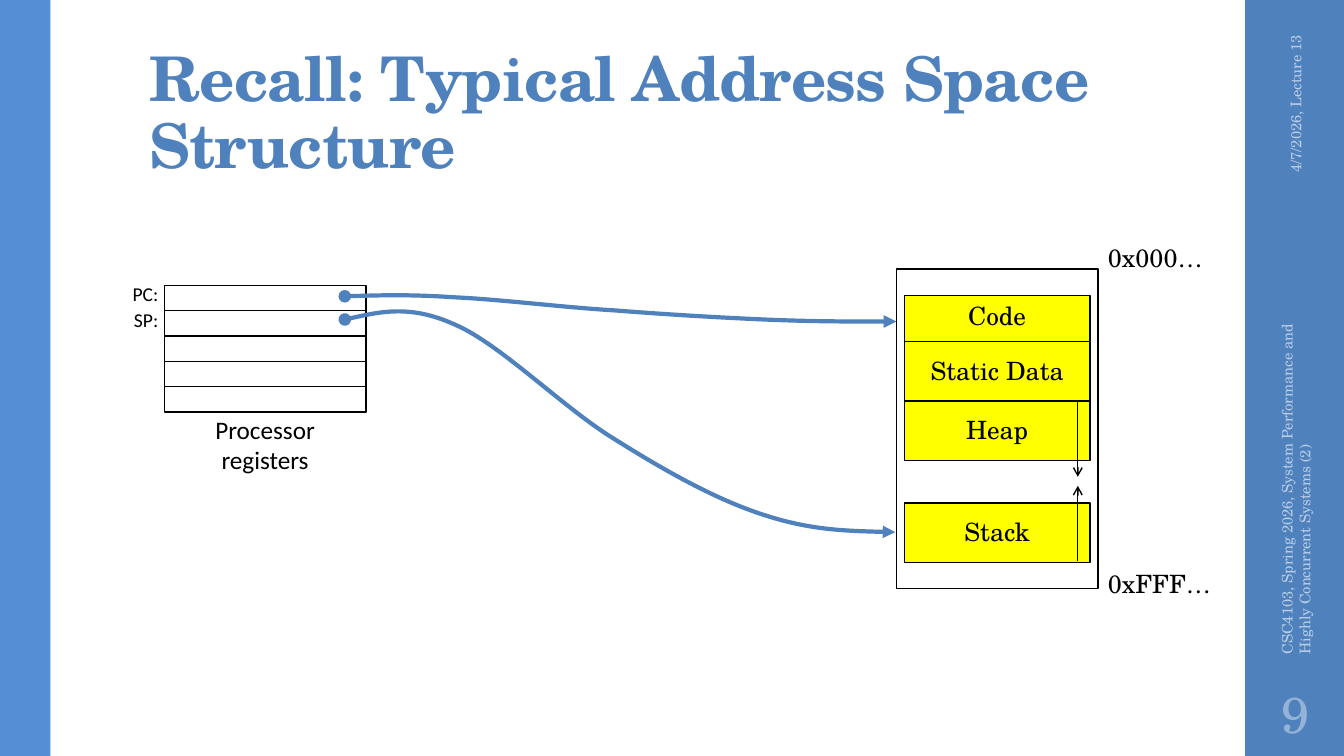
from lxml.etree import SubElement
from pptx import Presentation
from pptx.dml.color import RGBColor
from pptx.enum.shapes import MSO_CONNECTOR as LINK, MSO_SHAPE as SHAPE
from pptx.enum.text import MSO_ANCHOR as ANCHOR, PP_ALIGN as ALIGN
from pptx.oxml.ns import qn
from pptx.util import Pt

PX = 9144  # 100 px to the inch
SERIF, SANS = "TeX Gyre Schola", "Calibri"
BLUE, BLACK, YELLOW = "4F81BD", "000000", "FFFF00"


def px(*nums):
    return [round(n * PX) for n in nums]


def paint(fmt, color):
    fmt.solid()
    color_obj = fmt.fore_color
    color_obj.rgb = RGBColor.from_string(color)


def write(shape, text, size=18, font=SERIF, color=BLACK, bold=False,
          align=ALIGN.LEFT, anchor=ANCHOR.TOP, wrap=False,
          inset=(10, 5, 10, 5), leading=None, track=None):
    frame = shape.text_frame
    frame.word_wrap = wrap
    frame.vertical_anchor = anchor
    (frame.margin_left, frame.margin_top,
     frame.margin_right, frame.margin_bottom) = px(*inset)
    frame.text = text
    for para in frame.paragraphs:
        para.alignment = align
        if leading:
            para.line_spacing = leading
        for run in para.runs:
            run.font.size, run.font.name = Pt(size), font
            run.font.bold = bold
            paint(run.font.fill, color)
            if track:
                run.font._element.set("spc", str(track))


def label(slide, box, text, turn=0, **style):
    shape = slide.shapes.add_textbox(*px(*box))
    shape.rotation = turn
    write(shape, text, **style)


def rect(slide, box, fill=None, line=None):
    shape = slide.shapes.add_shape(SHAPE.RECTANGLE, *px(*box))
    shape.shadow.inherit = False
    if fill:
        paint(shape.fill, fill)
    else:
        shape.fill.background()
    if line:
        paint(shape.line.fill, line)
        shape.line.width = Pt(1)
    else:
        shape.line.fill.background()
    return shape


def tip(shape, **ends):
    """Add line ends, given as head=kind and tail=kind in that order."""
    ln = shape._element.spPr.find(qn("a:ln"))
    for end, kind in ends.items():
        SubElement(ln, qn(f"a:{end}End"), type=kind)


def curve(slide, start, *points):
    """Draw a Bezier line; each three points make one segment."""
    build = slide.shapes.build_freeform(*start, scale=PX)
    build.add_line_segments(points, close=False)
    shape = build.convert_to_shape()
    steps = list(shape._element.iter(qn("a:lnTo")))
    for i in range(0, len(steps), 3):
        first, *rest = steps[i:i + 3]
        first.tag = qn("a:cubicBezTo")
        for step in rest:
            first.append(step[0])
            step.getparent().remove(step)
    shape.shadow.inherit = False
    shape.fill.background()
    paint(shape.line.fill, BLUE)
    shape.line.width = Pt(3)
    tip(shape, head="oval", tail="triangle")


def arrow(slide, x, top, end):
    link = slide.shapes.add_connector(LINK.STRAIGHT, *px(x, top, x, end))
    paint(link.line.fill, BLACK)
    link.line.width = Pt(1)
    tip(link, tail="arrow")
    SubElement(link._element.spPr, qn("a:effectLst"))


def margins(slide, wide, high):
    left = wide - 98
    rect(slide, (left, 0, 100, high), BLUE)
    rect(slide, (0, 0, 50, high), "558ED5")
    note = dict(turn=270, size=10.5, color="B9CDE5", wrap=True,
                anchor=ANCHOR.MIDDLE)
    label(slide, (left - 54, 109, 208, 40), "4/7/2026, Lecture 13",
          align=ALIGN.RIGHT, **note)
    label(slide, (left - 146, 443, 392, 40),
          "CSC4103, Spring 2026, System Performance and "
          "Highly Concurrent Systems (2)", **note)
    label(slide, (left, high - 75, 100, 65), "9", size=36, color="95B3D7",
          align=ALIGN.CENTER, anchor=ANCHOR.MIDDLE, wrap=True,
          inset=(5, 5, 5, 5))


def registers(slide, left, top, wide, high):
    row = high / 5
    rect(slide, (left, top, wide, high), line=BLACK)
    for i in (1, 3):
        rect(slide, (left, top + i * row, wide, row), line=BLACK)
    for i, name in enumerate(("PC:", "SP:")):
        label(slide, (left - 49, top - 8 + i * 26, 53, 34), name,
              size=14, font=SANS, align=ALIGN.RIGHT)
    label(slide, (left + 33, top + high - 3, 134, 71),
          "Processor\nregisters", font=SANS, align=ALIGN.CENTER)


def memory(slide, left, top, wide, high):
    rect(slide, (left, top, wide, high), line=BLACK)
    label(slide, (left + wide, top - 32, 115, 40), "0x000…")
    label(slide, (left + wide, top + high - 25, 123, 40), "0xFFF…")
    blocks = (("Code", 26, 46, 5), ("Static Data", 72, 59, 13),
              ("Heap", 131, 59, 13), ("Stack", 232, 59, 13))
    for name, down, tall, pad in blocks:
        block = rect(slide, (left + 8, top + down, wide - 16, tall),
                     YELLOW, BLACK)
        write(block, name, align=ALIGN.CENTER, inset=(10, pad, 10, 5))
    x = left + wide - 20
    arrow(slide, x, top + 290, top + 215)
    arrow(slide, x, top + 131, top + 206)


def pointers(slide):
    curve(slide, (342, 294),
          (374, 293), (407, 292), (451, 295),
          (496, 297), (559, 305), (610, 308),
          (661, 312), (712, 315), (758, 317),
          (805, 319), (847, 319), (889, 319))
    curve(slide, (342, 317),
          (374, 310), (407, 302), (451, 322),
          (496, 341), (559, 405), (610, 436),
          (661, 468), (711, 496), (758, 511),
          (804, 526), (846, 527), (888, 528))


def main():
    deck = Presentation()
    wide, high = 1333, 750
    deck.slide_width, deck.slide_height = px(wide, high)
    slide = deck.slides.add_slide(deck.slide_layouts[6])
    margins(slide, wide, high)
    label(slide, (138, 32, 1060, 153), "Recall: Typical Address Space Structure",
          size=44, color=BLUE, bold=True, anchor=ANCHOR.BOTTOM, wrap=True,
          inset=(10, 3, 10, 5), leading=0.9, track=-50)
    registers(slide, 163, 283, 200, 126)
    pointers(slide)
    memory(slide, 889, 267, 200, 317)
    deck.save("out.pptx")


if __name__ == "__main__":
    main()
